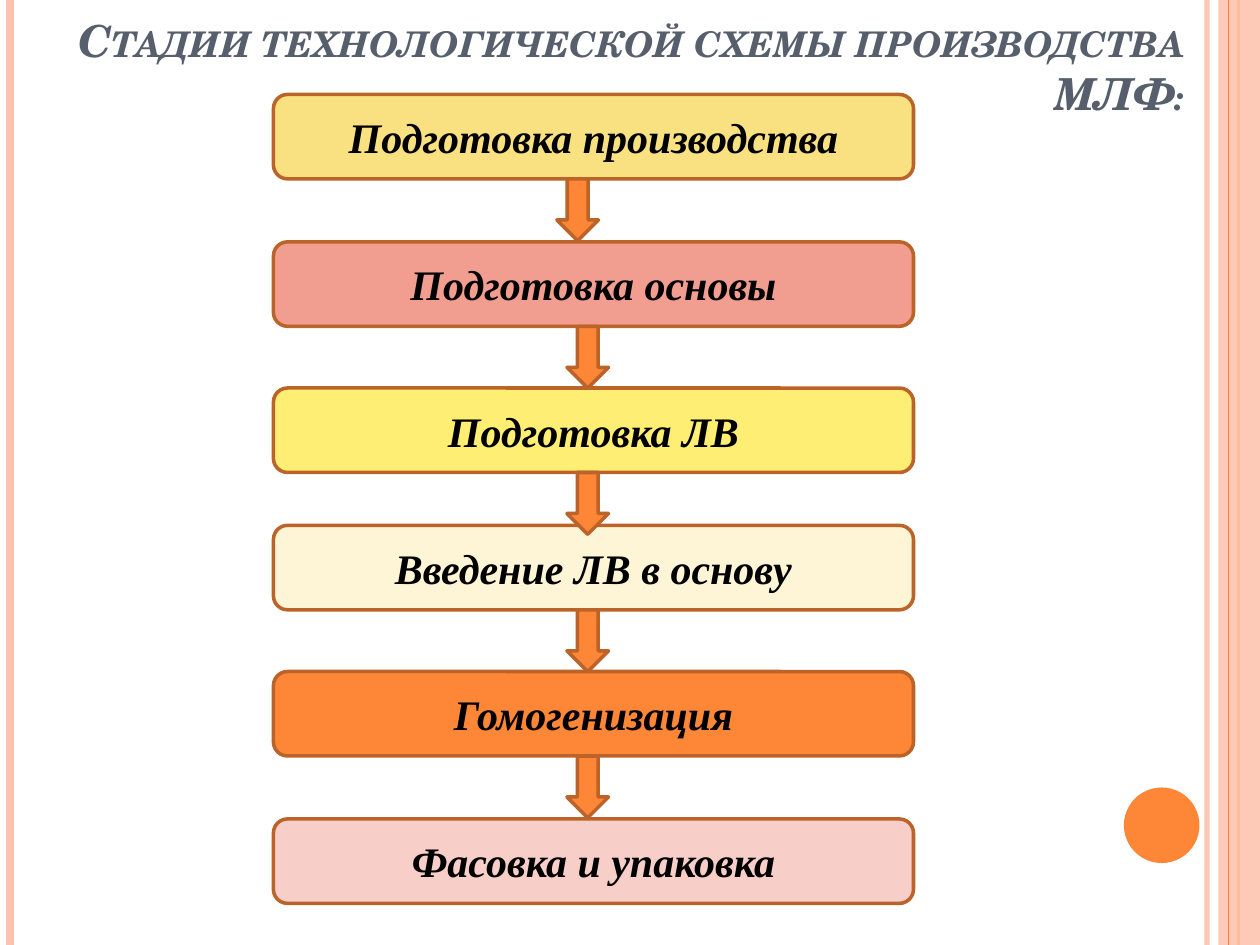
from dataclasses import dataclass

from lxml.etree import SubElement
from pptx import Presentation
from pptx.dml.color import RGBColor
from pptx.enum.shapes import MSO_CONNECTOR, MSO_SHAPE
from pptx.enum.text import MSO_ANCHOR, PP_ALIGN
from pptx.oxml.ns import qn
from pptx.util import Inches, Pt


@dataclass(frozen=True)
class Theme:
    orange: str = "FE8637"
    peach: str = "FEC3AE"
    edge: str = "BC6329"
    slate: str = "575F6D"
    black: str = "000000"
    head: str = "TeX Gyre Schola"
    body: str = "Times New Roman"
    title: float = 25.2
    step: float = 24
    stroke: float = 2


class Deck:
    def __init__(self, theme, slide):
        self.theme = theme
        self.slide = slide

    def paint(self, fill, color, alpha=100):
        fill.solid()
        fill.fore_color.rgb = RGBColor.from_string(color)
        if alpha < 100:
            tone = fill._xPr.find(qn("a:solidFill"))[0]
            SubElement(tone, qn("a:alpha")).set("val", str(alpha * 1000))

    def rule(self, x, color, width, alpha=100):
        line = self.slide.shapes.add_connector(
            MSO_CONNECTOR.STRAIGHT, Inches(x), 0, Inches(x), Inches(7.5))
        line.line.width = Pt(width)
        self.paint(line.line.fill, color, alpha)
        SubElement(line._element.spPr, qn("a:effectLst"))

    def shape(self, kind, box, color, edge=None, alpha=100):
        item = self.slide.shapes.add_shape(kind, *map(Inches, box))
        item.shadow.inherit = False
        self.paint(item.fill, color, alpha)
        if edge:
            self.paint(item.line.fill, edge)
            item.line.width = Pt(self.theme.stroke)
        else:
            item.line.fill.background()
        return item

    def label(self, item, text, face, size, color, align, anchor):
        frame = item.text_frame
        frame.word_wrap = True
        frame.vertical_anchor = anchor
        para = frame.paragraphs[0]
        para.text = text
        para.alignment = align
        font = para.font
        font.name = face
        font.size = Pt(size)
        font.bold = font.italic = True
        font.color.rgb = RGBColor.from_string(color)
        return para

    def title(self, text, box):
        item = self.slide.shapes.add_textbox(*map(Inches, box))
        para = self.label(item, text, self.theme.head, self.theme.title,
                          self.theme.slate, PP_ALIGN.RIGHT, MSO_ANCHOR.BOTTOM)
        para._p.get_or_add_pPr().get_or_add_defRPr().set("cap", "small")

    def step(self, text, box, color):
        item = self.shape(MSO_SHAPE.ROUNDED_RECTANGLE, box, color, self.theme.edge)
        self.label(item, text, self.theme.body, self.theme.step,
                   self.theme.black, PP_ALIGN.CENTER, MSO_ANCHOR.MIDDLE)

    def arrow(self, x, y):
        self.shape(MSO_SHAPE.DOWN_ARROW, (x, y, 0.33, 0.49),
                   self.theme.orange, self.theme.edge)


def main():
    show = Presentation()
    show.slide_width, show.slide_height = Inches(10), Inches(7.5)
    theme = Theme()
    deck = Deck(theme, show.slides.add_slide(show.slide_layouts[6]))

    deck.rule(9.58, theme.peach, 3, 93)
    deck.rule(0.08, theme.peach, 4.5)
    deck.rule(9.83, theme.orange, 1.5)
    deck.shape(MSO_SHAPE.RECTANGLE, (9.67, 0, 0.33, 7.5), theme.peach, alpha=87)
    deck.rule(9.75, theme.orange, 0.75)
    deck.shape(MSO_SHAPE.OVAL, (8.92, 6.25, 0.6, 0.6), theme.orange)
    deck.title("Стадии технологической схемы производства МЛФ:", (0.17, 0, 9.33, 1))

    steps = [
        ("Подготовка производства", 0.75, "F9E181"),
        ("Подготовка основы", 1.92, "F19E91"),
        ("Подготовка ЛВ", 3.08, "FFEE74"),
        ("Введение ЛВ в основу", 4.17, "FDF5D5"),
        ("Гомогенизация", 5.33, theme.orange),
        ("Фасовка и упаковка", 6.5, "F8CFC8"),
    ]
    tall = 0.67
    for text, top, color in steps:
        deck.step(text, (2.17, top, 5.08, tall), color)
    for i, (_, top, _) in enumerate(steps[:-1]):
        deck.arrow(4.5 if i else 4.42, top + tall)

    show.save("out.pptx")


if __name__ == "__main__":
    main()
